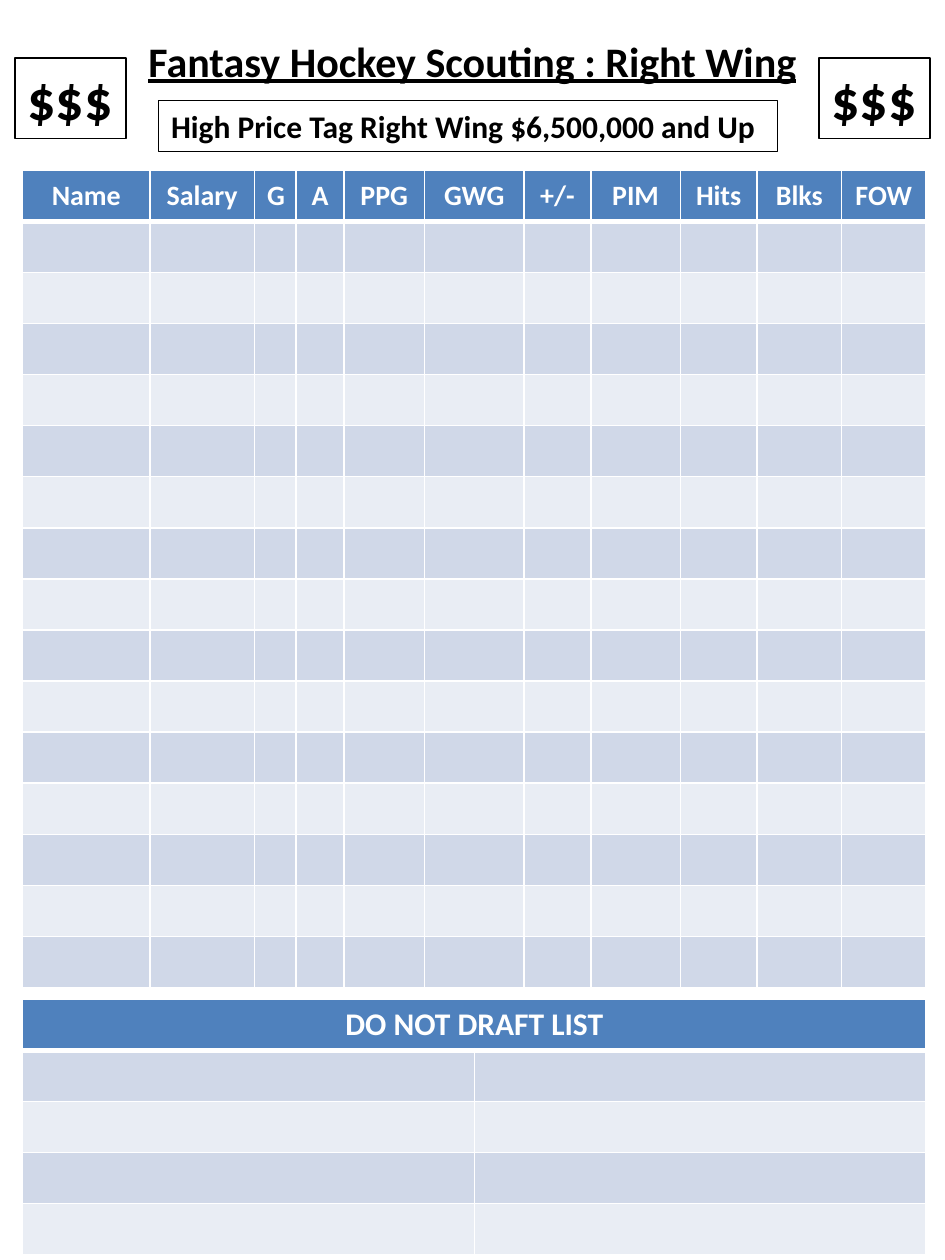
import lxml.etree
import pptx
import pptx.dml.color
import pptx.enum.text
import pptx.oxml.ns
import pptx.util

PAGE_WIDTH, PAGE_HEIGHT = pptx.util.Inches(7.5), pptx.util.Inches(10)
COLORS = {"ink": "000000", "paper": "FFFFFF", "header": "4F81BD",
          "odd": "D0D8E8", "even": "E9EDF4"}
ALIGN = pptx.enum.text.PP_ALIGN
ANCHOR = pptx.enum.text.MSO_ANCHOR

# Boxes are (left, top, width, height) in percent of the page.
TITLE_BOX = (7.47, 1.8, 85.07, 6)
PRICE_BOX = (16.8, 8, 65.47, 4.04)
BADGE_BOXES = [(left, 4.6, 11.73, 6.4) for left in (86.67, 1.6)]
STATS_BOX = (2.4, 13.5, 95.6, 64.9)
DRAFT_BOX = (2.4, 79.3, 95.6, 20.3)

STATS_COLUMNS = {"Name": 1.01, "Salary": 0.83, "G": 0.33, "A": 0.38, "PPG": 0.64,
                 "GWG": 0.79, "+/-": 0.53, "PIM": 0.71, "Hits": 0.61,
                 "Blks": 0.67, "FOW": 0.67}
STATS_ROWS = 16
DRAFT_ROWS = 5


def rgb(name):
    return pptx.dml.color.RGBColor.from_string(COLORS[name])


def to_lengths(box):
    """Turn percentages of the page into lengths."""
    sides = (PAGE_WIDTH, PAGE_HEIGHT) * 2
    return [round(share * side / 100) for share, side in zip(box, sides)]


def write_text(frame, text, size, color="ink", align=ALIGN.LEFT, underline=None):
    para = frame.paragraphs[0]
    para.alignment = align
    span = para.add_run()
    span.text = text
    formats = {"name": "Calibri", "size": pptx.util.Pt(size),
               "bold": True, "underline": underline}
    for name, value in formats.items():
        setattr(span.font, name, value)
    span.font.color.rgb = rgb(color)


def add_label(page, box, text, size, outlined=True, **formats):
    label = page.shapes.add_textbox(*to_lengths(box))
    frame = label.text_frame
    frame.word_wrap = True
    frame.vertical_anchor = ANCHOR.TOP if outlined else ANCHOR.MIDDLE
    if outlined:
        label.line.color.rgb = rgb("ink")
        label.line.width = pptx.util.Pt(0.75)
    write_text(frame, text, size, **formats)


def style_cell(cell, row):
    """Band the cell by its row and rule it in white, thickest under the header."""
    widths = {"L": 1, "R": 1, "T": 3 if row == 1 else 1, "B": 3 if row == 0 else 1}
    qn = pptx.oxml.ns.qn
    properties = cell._tc.get_or_add_tcPr()
    for side, width in widths.items():
        line = lxml.etree.SubElement(properties, qn("a:ln" + side),
                                     w=str(pptx.util.Pt(width)))
        paint = lxml.etree.SubElement(line, qn("a:solidFill"))
        lxml.etree.SubElement(paint, qn("a:srgbClr"), val=COLORS["paper"])
    cell.fill.solid()
    cell.fill.fore_color.rgb = rgb("header" if row == 0 else "odd" if row % 2 else "even")


def add_banded_table(page, box, row_count, weights):
    left, top, width, height = to_lengths(box)
    table = page.shapes.add_table(row_count, len(weights), left, top, width, height).table
    for column, weight in zip(table.columns, weights):
        column.width = round(width * weight / sum(weights))
    for index, row in enumerate(table.rows):
        row.height = round(height / row_count)
        for cell in row.cells:
            style_cell(cell, index)
    return table


def add_heading(page):
    add_label(page, TITLE_BOX, "Fantasy Hockey Scouting : Right Wing", 24,
              outlined=False, align=ALIGN.CENTER, underline=True)
    add_label(page, PRICE_BOX, "High Price Tag Right Wing $6,500,000 and Up", 18)
    for box in BADGE_BOXES:
        add_label(page, box, "$$$", 32)


def add_stats_table(page, box):
    table = add_banded_table(page, box, STATS_ROWS, list(STATS_COLUMNS.values()))
    for cell, name in zip(table.rows[0].cells, STATS_COLUMNS):
        cell.vertical_anchor = ANCHOR.MIDDLE
        write_text(cell.text_frame, name, 16, "paper", ALIGN.CENTER)


def add_draft_table(page, box):
    table = add_banded_table(page, box, DRAFT_ROWS, [1, 1])
    header = table.cell(0, 0)
    header.merge(table.cell(0, 1))
    write_text(header.text_frame, "DO NOT DRAFT LIST", 18, "paper", ALIGN.CENTER)


def main():
    deck = pptx.Presentation()
    deck.slide_width, deck.slide_height = PAGE_WIDTH, PAGE_HEIGHT
    page = deck.slides.add_slide(deck.slide_layouts[6])
    add_heading(page)
    add_stats_table(page, STATS_BOX)
    add_draft_table(page, DRAFT_BOX)
    deck.save("out.pptx")


if __name__ == "__main__":
    main()
